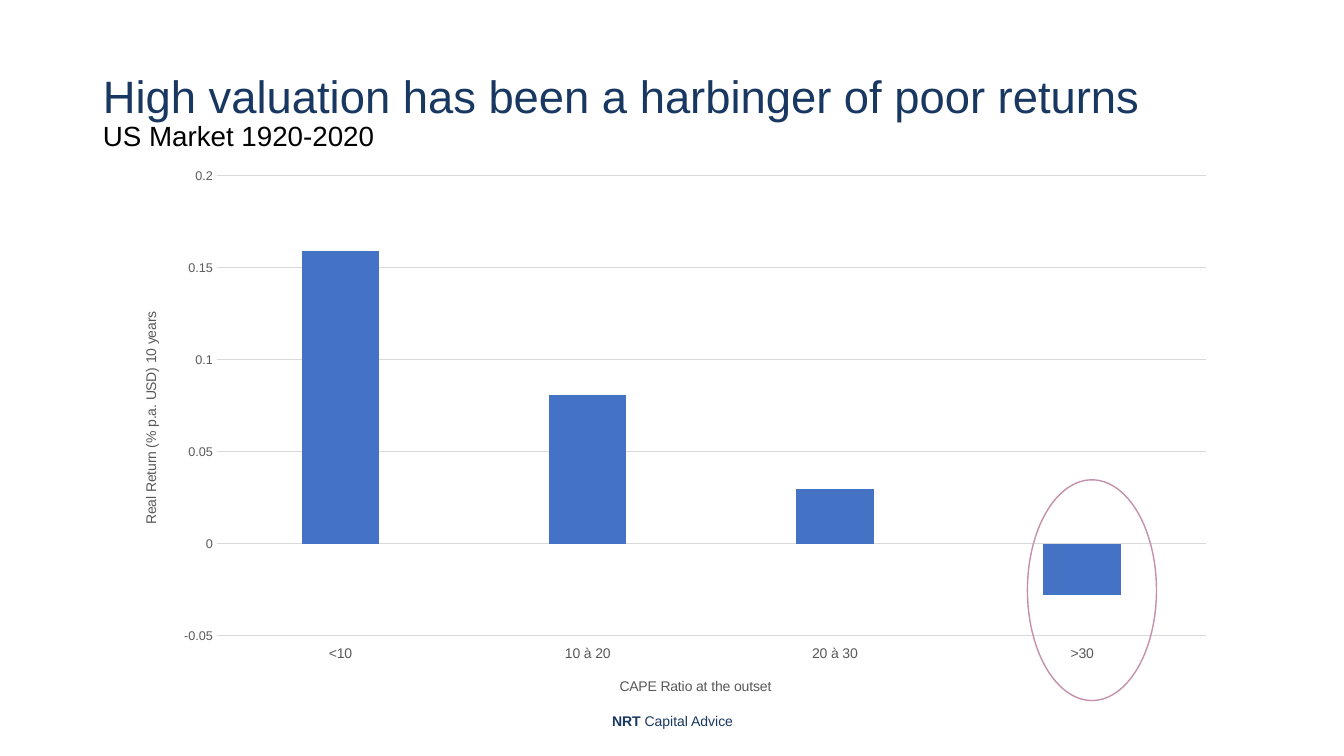
from typing import NamedTuple

from lxml.etree import SubElement
from pptx import Presentation
from pptx.chart.data import CategoryChartData
from pptx.dml.color import RGBColor
from pptx.enum.chart import XL_CHART_TYPE, XL_TICK_LABEL_POSITION, XL_TICK_MARK
from pptx.enum.shapes import MSO_SHAPE
from pptx.enum.text import MSO_ANCHOR, PP_ALIGN
from pptx.oxml.ns import qn
from pptx.util import Inches, Pt

FONT = "Arial"
COLORS = {
    "navy": "193861",
    "black": "000000",
    "grey": "595959",
    "grid": "D9D9D9",
    "bar": "4472C4",
    "ring": "C490AA",
}
RETURNS = {"<10": 0.159, "10 à 20": 0.081, "20 à 30": 0.03, ">30": -0.028}


class RunStyle(NamedTuple):
    size: float
    color: str
    bold: bool = False


class AxisStyle(NamedTuple):
    title: str
    label_size: float
    title_x: float
    title_y: float


CAPE_AXIS = AxisStyle("CAPE Ratio at the outset", 10, 0.45, 0.93)
RETURN_AXIS = AxisStyle("Real Return (% p.a. USD) 10 years", 9, 0.02, 0.27)


def rgb(name: str) -> RGBColor:
    return RGBColor.from_string(COLORS[name])


def style_font(font, style: RunStyle) -> None:
    font.name = FONT
    font.size = Pt(style.size)
    font.bold = style.bold
    font.color.rgb = rgb(style.color)


def style_line(line, color: str, width: float) -> None:
    line.color.rgb = rgb(color)
    line.width = Pt(width)


def set_layout(parent, index: int, **settings: object) -> None:
    """Place a chart part by fractions of the chart's size."""
    for old in parent.findall(qn("c:layout")):
        parent.remove(old)
    layout = SubElement(parent, qn("c:layout"))
    parent.insert(index, layout)
    manual = SubElement(layout, qn("c:manualLayout"))
    for key, value in settings.items():
        SubElement(manual, qn(f"c:{key}")).set("val", str(value))


def style_axis(axis, style: AxisStyle) -> None:
    axis.major_tick_mark = axis.minor_tick_mark = XL_TICK_MARK.NONE
    style_font(axis.tick_labels.font, RunStyle(style.label_size, "grey"))
    tf = axis.axis_title.text_frame
    tf.text = style.title
    style_font(tf.paragraphs[0].runs[0].font, RunStyle(10, "grey"))
    set_layout(axis.axis_title._element, 1, xMode="edge", yMode="edge",
               x=style.title_x, y=style.title_y)


def add_title(slide) -> None:
    title = slide.shapes.title
    title.left, title.top = Inches(0.92), Inches(0.4)
    title.width, title.height = Inches(11.5), Inches(1.45)
    tf = title.text_frame
    tf.text = "High valuation has been a harbinger of poor returns\vUS Market 1920-2020"
    tf.vertical_anchor = MSO_ANCHOR.MIDDLE
    p = tf.paragraphs[0]
    p.alignment = PP_ALIGN.LEFT
    p.line_spacing = 0.9
    for r, style in zip(p.runs, (RunStyle(32.4, "navy"), RunStyle(19.8, "black"))):
        style_font(r.font, style)


def add_footer(slide) -> None:
    sp = slide.shapes.add_textbox(Inches(4.42), Inches(6.95), Inches(4.5), Inches(0.4))
    tf = sp.text_frame
    tf.word_wrap = True
    tf.vertical_anchor = MSO_ANCHOR.MIDDLE
    p = tf.paragraphs[0]
    p.alignment = PP_ALIGN.CENTER
    for text, bold in (("NRT", True), (" Capital Advice", False)):
        r = p.add_run()
        r.text = text
        style_font(r.font, RunStyle(10, "navy", bold))


def add_returns_chart(slide) -> None:
    data = CategoryChartData()
    data.categories = list(RETURNS)
    data.add_series("Series 1", list(RETURNS.values()))
    chart = slide.shapes.add_chart(
        XL_CHART_TYPE.COLUMN_CLUSTERED,
        Inches(1.16), Inches(1.58), Inches(11.02), Inches(5.5), data,
    ).chart
    chart.has_legend = chart.has_title = False
    style_font(chart.font, RunStyle(10, "black"))

    plot = chart.plots[0]
    plot.gap_width, plot.overlap = 219, -27
    plot.vary_by_categories = False
    bars = plot.series[0]
    bars.invert_if_negative = False
    bars.format.fill.solid()
    bars.format.fill.fore_color.rgb = rgb("bar")

    style_axis(chart.category_axis, CAPE_AXIS)
    chart.category_axis.tick_label_position = XL_TICK_LABEL_POSITION.LOW
    style_line(chart.category_axis.format.line, "grid", 0.75)

    value_axis = chart.value_axis
    style_axis(value_axis, RETURN_AXIS)
    value_axis.minimum_scale, value_axis.maximum_scale = -0.05, 0.2
    value_axis.major_unit = 0.05
    value_axis.tick_labels.number_format = "General"
    value_axis.tick_labels.number_format_is_linked = False
    value_axis.format.line.fill.background()
    style_line(value_axis.major_gridlines.format.line, "grid", 0.75)

    plot_area = chart.element.find(f"{qn('c:chart')}/{qn('c:plotArea')}")
    set_layout(plot_area, 0, layoutTarget="inner", xMode="edge", yMode="edge",
               x=0.09, y=0.03, w=0.89, h=0.83)


def add_ring(slide) -> None:
    """Circle the bar of the highest valuations."""
    sp = slide.shapes.add_shape(
        MSO_SHAPE.OVAL, Inches(10.19), Inches(4.76), Inches(1.28), Inches(2.19)
    )
    sp.shadow.inherit = False
    sp.fill.background()
    style_line(sp.line, "ring", 1)


def main() -> None:
    prs = Presentation()
    prs.slide_width, prs.slide_height = Inches(13.33), Inches(7.5)
    slide = prs.slides.add_slide(prs.slide_layouts[5])
    add_title(slide)
    add_footer(slide)
    add_returns_chart(slide)
    add_ring(slide)
    prs.save("out.pptx")


if __name__ == "__main__":
    main()
